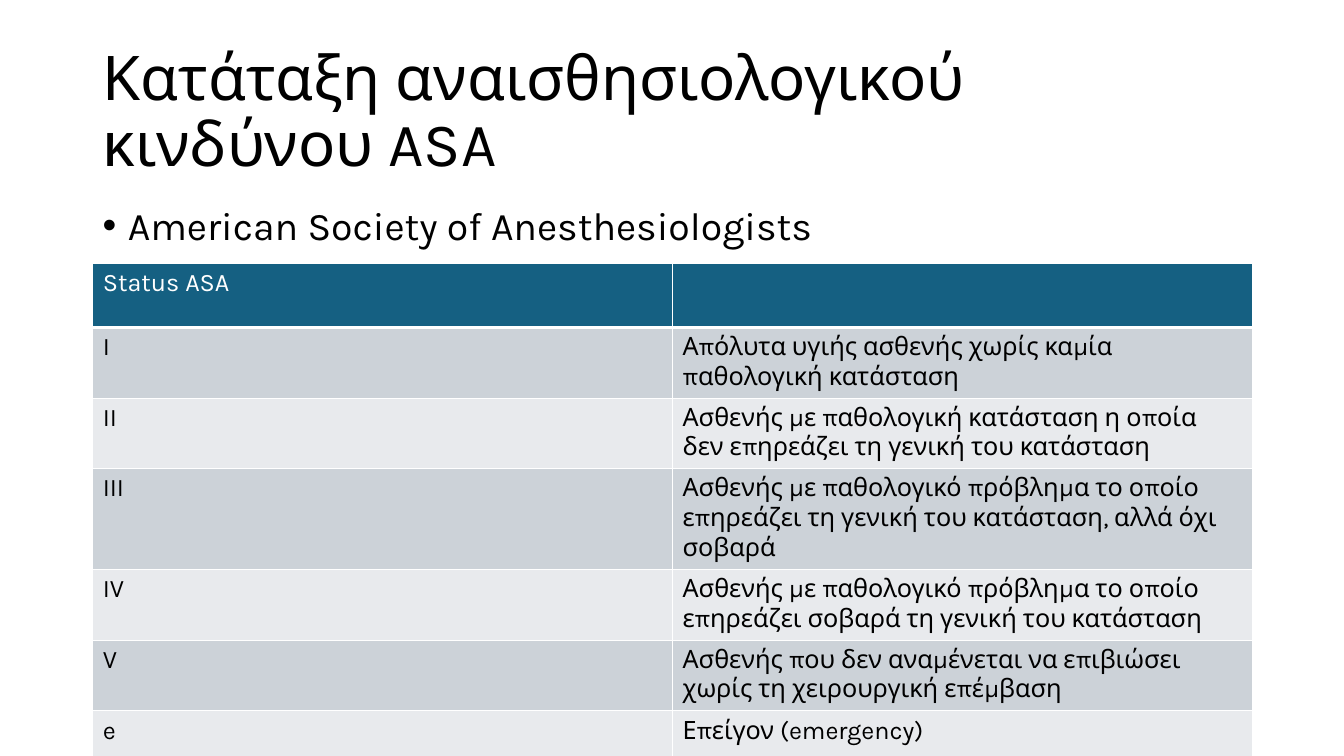
"""Build the slide on the ASA classification of anaesthetic risk."""
from dataclasses import dataclass

import lxml.etree
import pptx
import pptx.dml.color
import pptx.enum.text
import pptx.oxml.ns
import pptx.util

Inches = pptx.util.Inches
Pt = pptx.util.Pt
qn = pptx.oxml.ns.qn

FONT = "Karla"
COLORS = {
    "text": "000000",
    "light": "FFFFFF",
    "header": "156082",
    "odd": "CCD2D8",
    "even": "E8EAED",
}
LEFT, WIDTH = 0.92, 11.5
ROW_HEIGHT = 0.64


@dataclass
class TextBlock:
    text: str
    top: float
    height: float
    size: int
    anchor: pptx.enum.text.MSO_ANCHOR
    bullet: bool = False


@dataclass
class AsaClass:
    status: str
    description: str


HEADINGS = [
    TextBlock("Κατάταξη αναισθησιολογικού κινδύνου ASA", 0.4, 1.45, 44,
              pptx.enum.text.MSO_ANCHOR.MIDDLE),
    TextBlock("American Society of Anesthesiologists", 2, 4.76, 28,
              pptx.enum.text.MSO_ANCHOR.TOP, bullet=True),
]

ASA_CLASSES = [
    AsaClass("Status ASA", ""),
    AsaClass("I", "Απόλυτα υγιής ασθενής χωρίς καμία παθολογική κατάσταση"),
    AsaClass("II", "Ασθενής με παθολογική κατάσταση η οποία δεν επηρεάζει "
                   "τη γενική του κατάσταση"),
    AsaClass("III", "Ασθενής με παθολογικό πρόβλημα το οποίο επηρεάζει "
                    "τη γενική του κατάσταση, αλλά όχι σοβαρά"),
    AsaClass("IV", "Ασθενής με παθολογικό πρόβλημα το οποίο επηρεάζει σοβαρά "
                   "τη γενική του κατάσταση"),
    AsaClass("V", "Ασθενής που δεν αναμένεται να επιβιώσει "
                  "χωρίς τη χειρουργική επέμβαση"),
    AsaClass("e", "Επείγον (emergency)"),
]


def rgb(name: str) -> pptx.dml.color.RGBColor:
    return pptx.dml.color.RGBColor.from_string(COLORS[name])


def style_paragraph(paragraph, size: int, color: str) -> None:
    paragraph.font.name = FONT
    paragraph.font.size = Pt(size)
    paragraph.font.bold = False
    paragraph.font.color.rgb = rgb(color)


def add_bullet(paragraph) -> None:
    properties = paragraph._p.get_or_add_pPr()
    properties.set("marL", str(Inches(0.25)))
    properties.set("indent", str(Inches(-0.25)))
    lxml.etree.SubElement(properties, qn("a:buFont"), typeface="Arial")
    lxml.etree.SubElement(properties, qn("a:buChar"), char="•")


def add_heading(slide, block: TextBlock) -> None:
    box = slide.shapes.add_textbox(
        Inches(LEFT), Inches(block.top), Inches(WIDTH), Inches(block.height))
    frame = box.text_frame
    frame.word_wrap = True
    frame.vertical_anchor = block.anchor
    paragraph = frame.paragraphs[0]
    paragraph.text = block.text
    if block.bullet:
        add_bullet(paragraph)
    paragraph.line_spacing = 0.9
    style_paragraph(paragraph, block.size, "text")


def add_borders(cell, bottom_width: int) -> None:
    properties = cell._tc.get_or_add_tcPr()
    widths = {"a:lnL": 1, "a:lnR": 1, "a:lnT": 1, "a:lnB": bottom_width}
    for tag, width in widths.items():
        border = lxml.etree.SubElement(properties, qn(tag), w=str(Pt(width)))
        fill = lxml.etree.SubElement(border, qn("a:solidFill"))
        lxml.etree.SubElement(fill, qn("a:srgbClr"), val=COLORS["light"])


def add_asa_table(slide, classes: list[AsaClass]) -> None:
    table = slide.shapes.add_table(
        len(classes), 2, Inches(LEFT), Inches(2.61), Inches(WIDTH),
        Inches(ROW_HEIGHT * len(classes))).table
    for index, asa_class in enumerate(classes):
        is_header = index == 0
        fill = "header" if is_header else "odd" if index % 2 else "even"
        for cell, text in zip(table.rows[index].cells,
                              (asa_class.status, asa_class.description)):
            cell.text = text
            add_borders(cell, 3 if is_header else 1)
            cell.fill.solid()
            cell.fill.fore_color.rgb = rgb(fill)
            style_paragraph(cell.text_frame.paragraphs[0], 18,
                            "light" if is_header else "text")


def main() -> None:
    presentation = pptx.Presentation()
    presentation.slide_width = Inches(13.33)
    presentation.slide_height = Inches(7.5)
    slide = presentation.slides.add_slide(presentation.slide_layouts[6])
    for block in HEADINGS:
        add_heading(slide, block)
    add_asa_table(slide, ASA_CLASSES)
    presentation.save("out.pptx")


if __name__ == "__main__":
    main()
